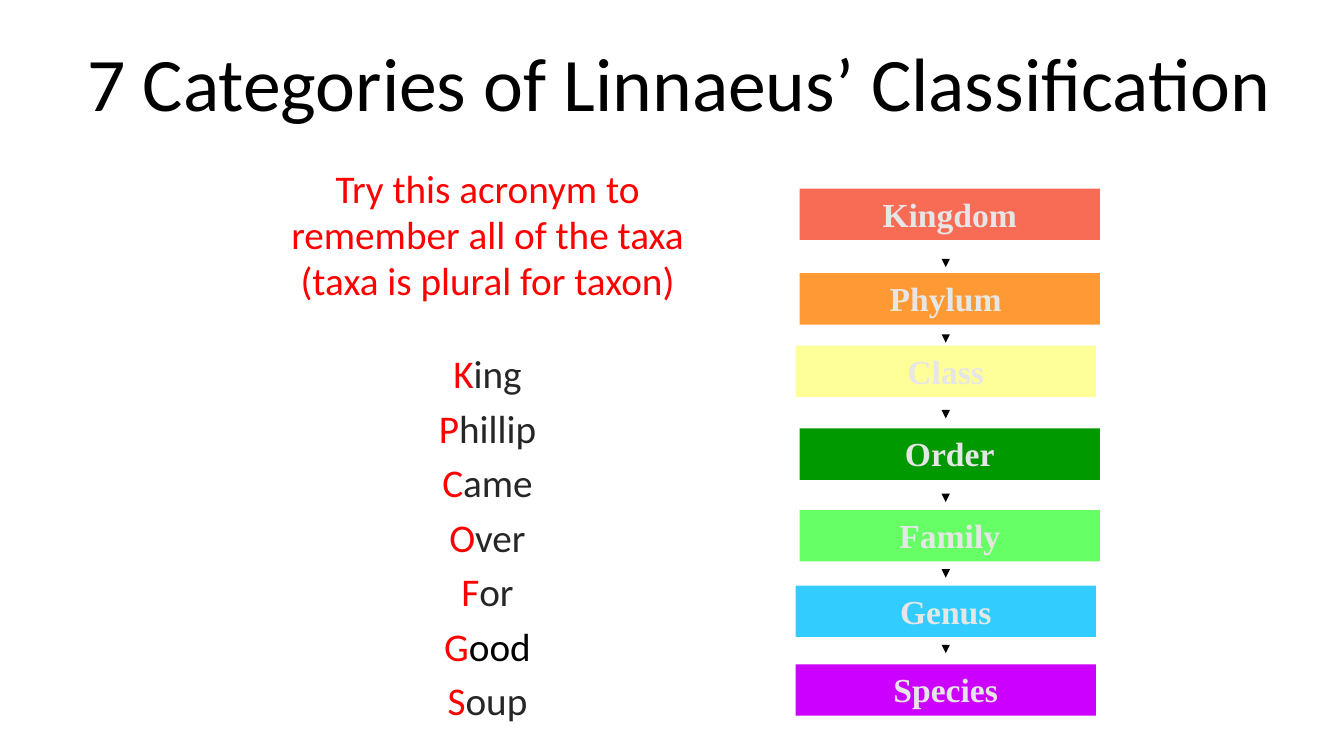
from lxml import etree
from pptx import Presentation
from pptx.dml.color import RGBColor
from pptx.enum.shapes import MSO_CONNECTOR as CONN, MSO_SHAPE as SHAPE
from pptx.enum.text import MSO_ANCHOR as ANCHOR, MSO_AUTO_SIZE as AUTO, PP_ALIGN as ALIGN
from pptx.oxml.ns import qn
from pptx.util import Inches, Pt

TITLE = "7 Categories of Linnaeus’ Classification"
INTRO = "Try this acronym to remember all of the taxa (taxa is plural for taxon)"
MNEMONIC = ["King", "Phillip", "Came", "Over", "For", "Good", "Soup"]
RED, BLACK, DARK, PALE = "FF0000", "000000", "262626", "E7E6E6"
TAXA = [
    ("Kingdom", 7.93, 1.87, "F86B54"),
    ("Phylum ", 7.93, 2.71, "FF9933"),
    ("Class", 7.89, 3.43, "FFFF99"),
    ("Order", 7.93, 4.25, "009900"),
    ("Family", 7.93, 5.06, "66FF66"),
    ("Genus", 7.89, 5.81, "33CCFF"),
    ("Species", 7.89, 6.59, "CC00FF"),
]
BAR_W, BAR_H = 2.98, 0.51
ARROW_X, ARROW_LEN = 9.38, 0.07
ARROW_TOPS = [2.58, 3.33, 4.08, 4.91, 5.66, 6.41]
TITLE_FONT = {"name": "Calibri", "size": Pt(54)}
BODY_FONT = {"name": "Calibri", "size": Pt(28)}
TAXON_FONT = {"name": "Times New Roman", "size": Pt(24), "bold": True}


def rgb(value):
    return RGBColor.from_string(value)


def add_run(p, text, font, color):
    r = p.add_run()
    r.text = text
    for name, value in font.items():
        setattr(r.font, name, value)
    r.font.color.rgb = rgb(color)


def place(sp, left, top, width, height):
    sp.left, sp.top = Inches(left), Inches(top)
    sp.width, sp.height = Inches(width), Inches(height)


def body_paragraph(p, space_before):
    pPr = p._p.get_or_add_pPr()
    pPr.set("marL", "0")
    pPr.set("indent", "0")
    etree.SubElement(pPr, qn("a:buNone"))
    layout = {"alignment": ALIGN.CENTER, "line_spacing": 0.98, "space_before": Pt(space_before)}
    for name, value in layout.items():
        setattr(p, name, value)


def add_taxon(s, text, left, top, fill):
    sp = s.shapes.add_shape(SHAPE.RECTANGLE, Inches(left), Inches(top), Inches(BAR_W), Inches(BAR_H))
    sp.shadow.inherit = False
    sp.fill.solid()
    sp.fill.fore_color.rgb = rgb(fill)
    sp.line.fill.background()
    tf = sp.text_frame
    tf.vertical_anchor = ANCHOR.TOP
    p = tf.paragraphs[0]
    p.alignment = ALIGN.CENTER
    add_run(p, text, TAXON_FONT, PALE)


def add_arrow(s, top):
    x = Inches(ARROW_X)
    line = s.shapes.add_connector(CONN.STRAIGHT, x, Inches(top), x, Inches(top + ARROW_LEN))
    line.line.color.rgb = rgb(BLACK)
    line.line.width = Pt(0.75)
    etree.SubElement(line.line._get_or_add_ln(), qn("a:tailEnd"), type="triangle")
    etree.SubElement(line._element.spPr, qn("a:effectLst"))


def main():
    prs = Presentation()
    prs.slide_width, prs.slide_height = Inches(13.33), Inches(7.5)
    s = prs.slides.add_slide(prs.slide_layouts[1])

    title, body = s.shapes.title, s.placeholders[1]
    place(title, 0.44, 0.23, 12.59, 1.15)
    place(body, 2.42, 1.6, 4.83, 5.11)
    for sp in (title, body):
        sp.text_frame.auto_size = AUTO.NONE
        sp.text_frame.word_wrap = True
    title.text_frame.vertical_anchor = ANCHOR.MIDDLE
    p = title.text_frame.paragraphs[0]
    p.alignment = ALIGN.CENTER
    add_run(p, TITLE, TITLE_FONT, BLACK)

    tf = body.text_frame
    p = tf.paragraphs[0]
    body_paragraph(p, 0)
    add_run(p, INTRO, BODY_FONT, RED)
    for i, word in enumerate(MNEMONIC):
        p = tf.add_paragraph()
        body_paragraph(p, 6 if i else 33.5)
        add_run(p, word[0], BODY_FONT, RED)
        add_run(p, word[1:], BODY_FONT, BLACK if word == "Good" else DARK)

    for taxon in TAXA:
        add_taxon(s, *taxon)
    for top in ARROW_TOPS:
        add_arrow(s, top)
    prs.save("out.pptx")


if __name__ == "__main__":
    main()
